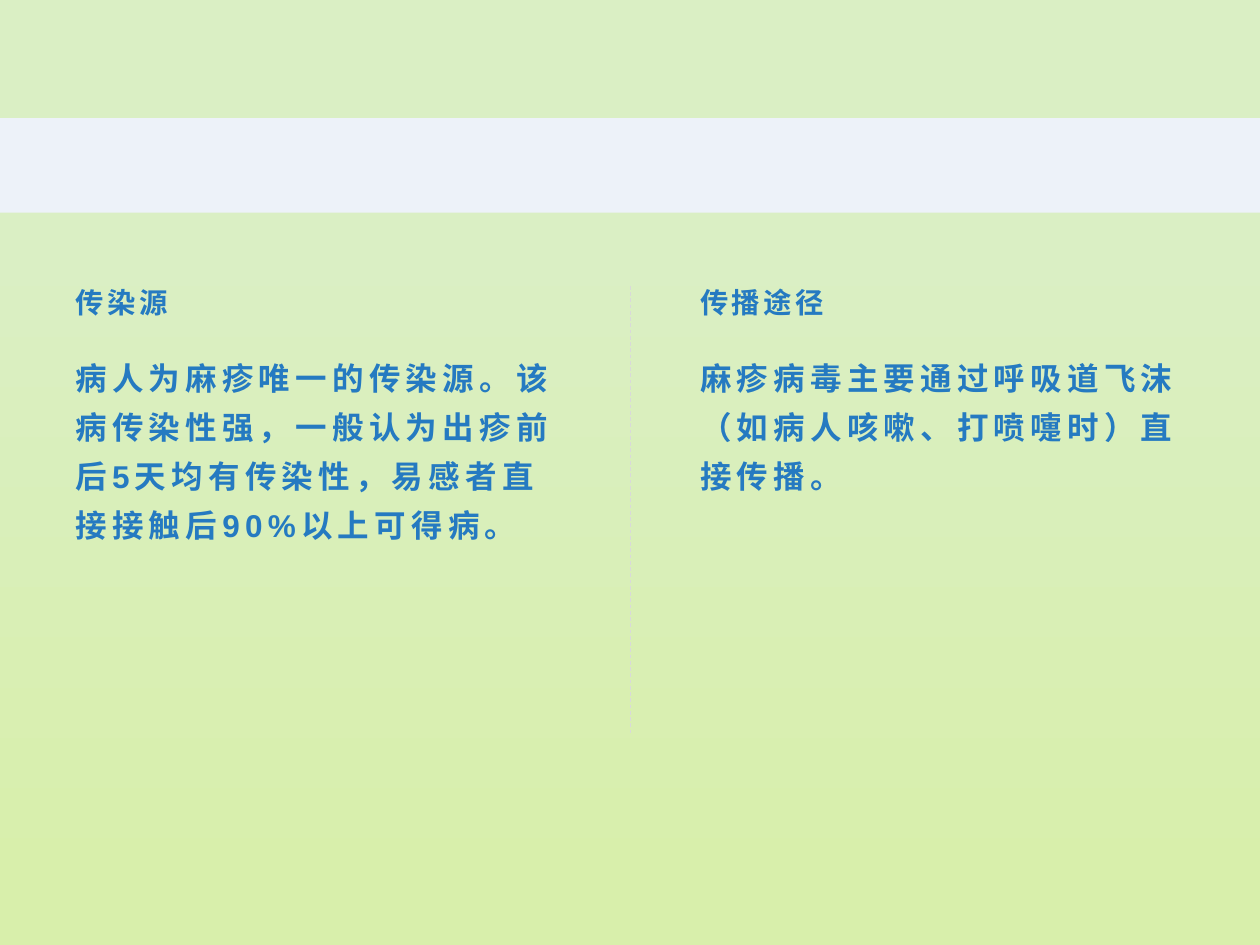
from lxml import etree
from pptx import Presentation
from pptx.dml.color import RGBColor
from pptx.enum import dml, shapes, text
from pptx.oxml.ns import qn
from pptx.util import Pt

HUES = {"top": "DAEFC4", "base": "D8EFAB", "band": "EDF2F9",
        "ink": "257AC1", "rule": "D9D9D9"}


class Deck:
    font = "Arial"

    def __init__(self, wide, high):
        self.prs = Presentation()
        self.prs.slide_width, self.prs.slide_height = Pt(wide), Pt(high)
        self.slide = self.prs.slides.add_slide(self.prs.slide_layouts[6])

    def hue(self, name):
        return RGBColor.from_string(HUES[name])

    def ground(self, stops):
        fill = self.slide.background.fill
        fill.gradient()
        fill.gradient_angle = 270
        for stop, (name, pos) in zip(fill.gradient_stops, stops):
            stop.color.rgb = self.hue(name)
            stop.position = pos

    def band(self, x, y, w, h):
        box = self.slide.shapes.add_shape(
            shapes.MSO_SHAPE.RECTANGLE, Pt(x), Pt(y), Pt(w), Pt(h))
        box.shadow.inherit = False
        box.fill.solid()
        box.fill.fore_color.rgb = self.hue("band")
        box.line.fill.background()

    def rule(self, x, top, end):
        line = self.slide.shapes.add_connector(
            shapes.MSO_CONNECTOR.STRAIGHT, Pt(x), Pt(top), Pt(x), Pt(end))
        line.line.color.rgb = self.hue("rule")
        line.line.width = Pt(0.5)
        line.line.dash_style = dml.MSO_LINE.DASH
        etree.SubElement(line._element.spPr, qn("a:effectLst"))

    def label(self, x, y, w, h, words, size, lead, gap):
        frame = self.slide.shapes.add_textbox(
            Pt(x), Pt(y), Pt(w), Pt(h)).text_frame
        frame.word_wrap = True
        frame.vertical_anchor = text.MSO_ANCHOR.TOP
        frame.text = words
        para = frame.paragraphs[0]
        para.line_spacing = lead
        for run in para.runs:
            run.font.size = Pt(size)
            run.font.bold = True
            run.font.name = self.font
            run.font.color.rgb = self.hue("ink")
            props = run.font._element
            props.set("spc", str(gap * 100))
            etree.SubElement(props, qn("a:ea")).set("typeface", self.font)


def main():
    wide, high = 720, 540
    edge, col = 36, 291
    head, body, end = 163.4, 195, 419
    deck = Deck(wide, high)
    deck.ground([("top", 0.25), ("base", 0.94)])
    deck.band(0, 67.5, wide, 54)
    deck.rule(wide / 2, head, end)
    parts = [
        ("传染源", "病人为麻疹唯一的传染源。该病传染性强，一般认为出疹前后5天均有传染性，易感者直接接触后90%以上可得病。"),
        ("传播途径", "麻疹病毒主要通过呼吸道飞沫（如病人咳嗽、打喷嚏时）直接传播。"),
    ]
    for x, (title, words) in zip((edge, wide - edge - col), parts):
        deck.label(x, body, col, end - body, words, 18, 1.3, 3)
        deck.label(x, head, col, 27.4, title, 16.2, 0.8, 2)
    deck.prs.save("out.pptx")


if __name__ == "__main__":
    main()
